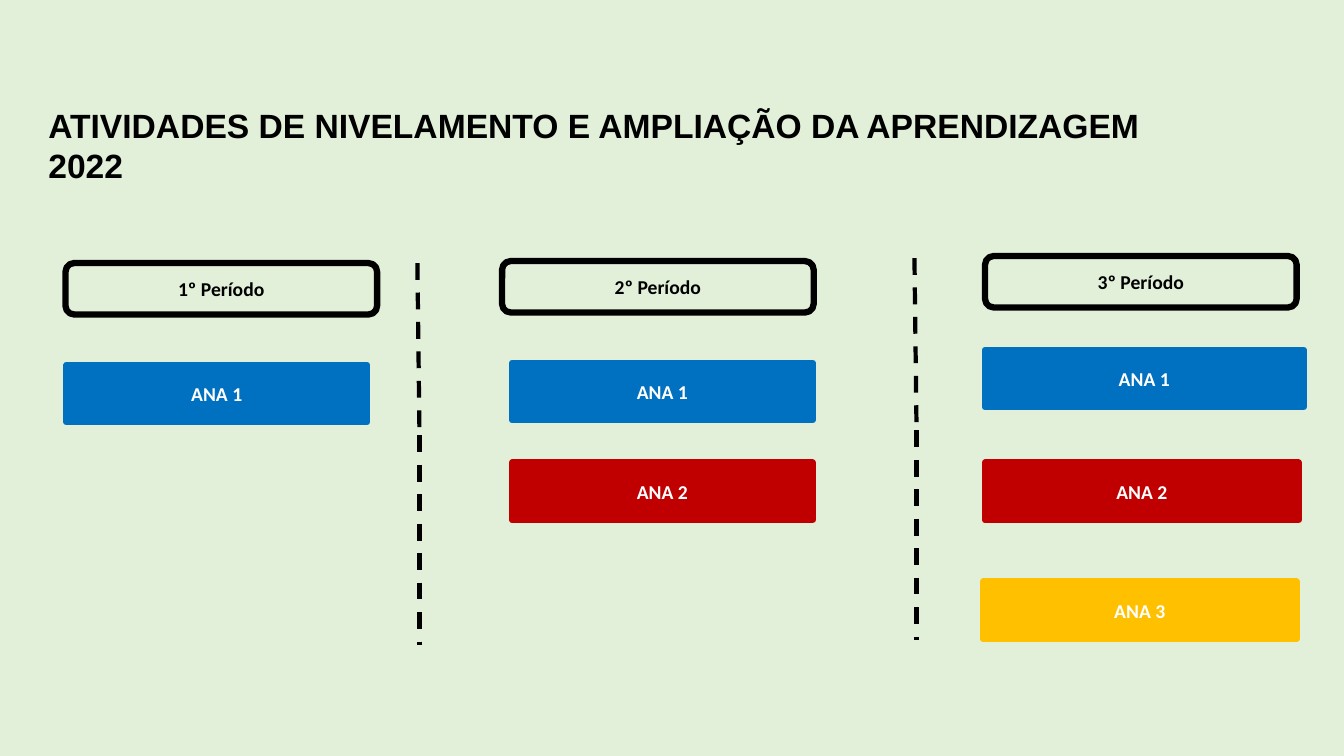
from lxml.etree import SubElement
from pptx import Presentation
from pptx.dml.color import RGBColor
from pptx.enum.dml import MSO_LINE
from pptx.enum.shapes import MSO_CONNECTOR, MSO_SHAPE
from pptx.enum.text import MSO_ANCHOR, MSO_AUTO_SIZE, PP_ALIGN
from pptx.oxml.ns import qn
from pptx.util import Inches, Pt

BLACK, WHITE, BACKGROUND = "000000", "FFFFFF", "E2F0D9"
ACTIVITY_COLORS = {"ANA 1": "0070C0", "ANA 2": "C00000", "ANA 3": "FFC000"}
PERIODS = [
    ("1º Período", 0.65, 2.61, [("ANA 1", 0.66, 3.62, 2.98)]),
    ("2º Período", 4.98, 2.59, [("ANA 1", 5.08, 3.6, 2.98),
                                ("ANA 2", 5.08, 4.59, 2.98)]),
    ("3º Período", 9.77, 2.54, [("ANA 1", 9.77, 3.47, 3.16),
                                ("ANA 2", 9.77, 4.59, 3.11),
                                ("ANA 3", 9.75, 5.77, 3.11)]),
]
DIVIDERS = [(4.14, 2.61), (9.07, 2.56)]


def color(hex_code):
    return RGBColor.from_string(hex_code)


class PeriodSlide:
    """Draws the elements of a slide in one shared style."""

    def __init__(self, presentation):
        self.slide = presentation.slides.add_slide(presentation.slide_layouts[5])
        self.shapes = self.slide.shapes
        background = self.slide.background.fill
        background.solid()
        background.fore_color.rgb = color(BACKGROUND)

    def set_text(self, frame, text, size, font_name, text_color, align):
        frame.text = text
        frame.word_wrap = True
        paragraph = frame.paragraphs[0]
        paragraph.alignment = align
        font = paragraph.runs[0].font
        font.size, font.name, font.bold = Pt(size), font_name, True
        font.color.rgb = color(text_color)

    def title(self, text, left, top, width, height):
        heading = self.shapes.title
        heading.left, heading.top = Inches(left), Inches(top)
        heading.width, heading.height = Inches(width), Inches(height)
        frame = heading.text_frame
        frame.auto_size = MSO_AUTO_SIZE.NONE
        frame.vertical_anchor = MSO_ANCHOR.TOP
        self.set_text(frame, text, 24, "Arial", BLACK, PP_ALIGN.LEFT)

    def box(self, kind, text, left, top, width, height, line_color, text_color):
        box = self.shapes.add_shape(
            kind, Inches(left), Inches(top), Inches(width), Inches(height))
        box.shadow.inherit = False
        box.fill.background()
        box.line.color.rgb = color(line_color)
        box.line.width = Pt(4.5)
        box.text_frame.vertical_anchor = MSO_ANCHOR.MIDDLE
        self.set_text(box.text_frame, text, 14, "Calibri", text_color,
                      PP_ALIGN.CENTER)
        return box

    def period(self, text, left, top):
        self.box(MSO_SHAPE.ROUNDED_RECTANGLE, text, left, top, 3.09, 0.51,
                 BLACK, BLACK)

    def activity(self, text, left, top, width):
        activity_color = ACTIVITY_COLORS[text]
        bar = self.box(MSO_SHAPE.RECTANGLE, text, left, top, width, 0.57,
                       activity_color, WHITE)
        bar.fill.solid()
        bar.fill.fore_color.rgb = color(activity_color)

    def dashed_line(self, x1, y1, x2, y2):
        dashes = self.shapes.add_connector(
            MSO_CONNECTOR.STRAIGHT, Inches(x1), Inches(y1), Inches(x2), Inches(y2))
        dashes.line.color.rgb = color(BLACK)
        dashes.line.width = Pt(3)
        dashes.line.dash_style = MSO_LINE.DASH
        SubElement(dashes._element.spPr, qn("a:effectLst"))

    def divider(self, left, top):
        right = left + 0.02
        self.dashed_line(left, top, right, top + 1.65)
        self.dashed_line(right, top + 1.71, right, top + 3.79)


def main():
    presentation = Presentation()
    presentation.slide_width = Inches(13.33)
    presentation.slide_height = Inches(7.5)
    page = PeriodSlide(presentation)
    page.title("ATIVIDADES DE NIVELAMENTO E AMPLIAÇÃO DA APRENDIZAGEM 2022",
               0.38, 0.99, 11.85, 0.5)
    for period, left, top, activities in PERIODS:
        page.period(period, left, top)
        for activity in activities:
            page.activity(*activity)
    for divider in DIVIDERS:
        page.divider(*divider)
    presentation.save("out.pptx")


if __name__ == "__main__":
    main()
